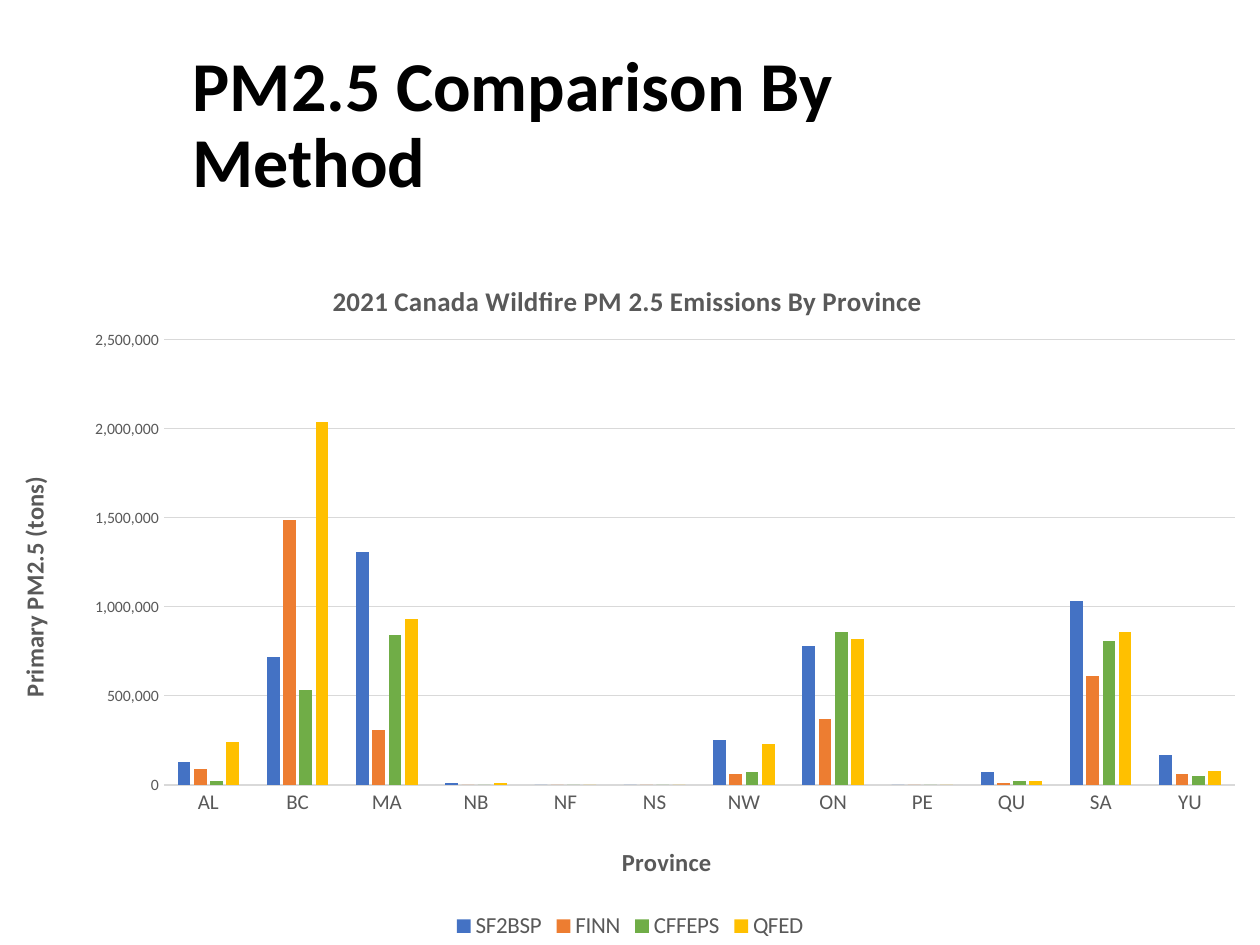
from lxml import etree
from pptx import Presentation
from pptx.chart.data import CategoryChartData
from pptx.dml.color import RGBColor
from pptx.enum import chart as ch, text
from pptx.oxml import ns
from pptx.util import Inches, Pt

FONT = "Calibri"
BLACK, GREY, LIGHT = "000000", "595959", "D9D9D9"
HEADING = "PM2.5 Comparison By Method"
CHART_TITLE = "2021 Canada Wildfire PM 2.5 Emissions By Province"
PROVINCES = ["AL", "BC", "MA", "NB", "NF", "NS", "NW", "ON", "PE", "QU", "SA", "YU"]
# Method, colour, thousands of tons per province
METHODS = [
    ("SF2BSP", "4472C4", [130, 720, 1310, 10, 0, 0, 250, 780, 0, 70, 1030, 170]),
    ("FINN", "ED7D31", [90, 1490, 310, 0, 0, 0, 60, 370, 0, 10, 610, 60]),
    ("CFFEPS", "70AD47", [20, 530, 840, 0, 0, 0, 70, 860, 0, 20, 810, 50]),
    ("QFED", "FFC000", [240, 2040, 930, 10, 0, 0, 230, 820, 0, 20, 860, 80]),
]


def rgb(value):
    return RGBColor.from_string(value)


def style(font, size, color=GREY, bold=False):
    font.name, font.size, font.bold = FONT, Pt(size), bold
    font.color.rgb = rgb(color)


def write(frame, words, **look):
    frame.text = words
    style(frame.paragraphs[0].runs[0].font, **look)


def place(element, index, **fractions):
    """Give a chart part a manual layout in fractions of the chart."""
    for old in element.findall(ns.qn("c:layout")):
        element.remove(old)
    layout = etree.Element(ns.qn("c:layout"))
    manual = etree.SubElement(layout, ns.qn("c:manualLayout"))
    if "w" in fractions:
        etree.SubElement(manual, ns.qn("c:layoutTarget")).set("val", "inner")
    for side in ("x", "y"):
        etree.SubElement(manual, ns.qn(f"c:{side}Mode")).set("val", "edge")
    for key, value in fractions.items():
        etree.SubElement(manual, ns.qn(f"c:{key}")).set("val", str(value))
    element.insert(index, layout)


def style_axis(axis, words, size, x, y):
    write(axis.axis_title.text_frame, words, size=14, bold=True)
    place(axis.axis_title._element, 1, x=x, y=y)
    style(axis.tick_labels.font, size)
    axis.major_tick_mark = axis.minor_tick_mark = ch.XL_TICK_MARK.NONE


def hairline(line):
    line.color.rgb, line.width = rgb(LIGHT), Pt(0.75)


def add_emissions_chart(slide):
    data = CategoryChartData(number_format="#,##0")
    data.categories = PROVINCES
    for method, _, thousands in METHODS:
        data.add_series(method, [1000 * value for value in thousands])
    chart = slide.shapes.add_chart(
        ch.XL_CHART_TYPE.COLUMN_CLUSTERED,
        Inches(0), Inches(1.98), Inches(10), Inches(5.52), data).chart
    style(chart.font, 10, BLACK)

    write(chart.chart_title.text_frame, CHART_TITLE, size=15.4, bold=True)
    chart.chart_title.include_in_layout = False
    place(chart.chart_title._element, 1, x=0.26, y=0.04)

    plot = chart.plots[0]
    plot.gap_width, plot.overlap, plot.vary_by_categories = 219, -27, False
    for series, (_, color, _) in zip(plot.series, METHODS):
        series.format.fill.solid()
        series.format.fill.fore_color.rgb = rgb(color)
    place(chart._chartSpace.chart.plotArea, 0, x=0.13, y=0.13, w=0.85, h=0.64)

    style_axis(chart.category_axis, "Province", 12, x=0.49, y=0.85)
    hairline(chart.category_axis.format.line)
    tons = chart.value_axis
    style_axis(tons, "Primary PM2.5 (tons)", 9, x=0.01, y=0.32)
    tons.minimum_scale, tons.maximum_scale, tons.major_unit = 0, 2500000, 500000
    tons.tick_labels.number_format = "#,##0"
    tons.tick_labels.number_format_is_linked = False
    tons.format.line.fill.background()
    hairline(tons.major_gridlines.format.line)

    chart.has_legend = True
    chart.legend.position = ch.XL_LEGEND_POSITION.BOTTOM
    chart.legend.include_in_layout = False
    style(chart.legend.font, 13.1)


def main():
    deck = Presentation()
    deck.slide_width, deck.slide_height = Inches(10), Inches(7.5)
    slide = deck.slides.add_slide(deck.slide_layouts[5])
    title = slide.shapes.title
    title.left, title.top = Inches(1.43), Inches(0.28)
    title.width, title.height = Inches(7.14), Inches(1.45)
    frame = title.text_frame
    write(frame, HEADING, size=40, color=BLACK, bold=True)
    frame.word_wrap, frame.auto_size = True, text.MSO_AUTO_SIZE.NONE
    frame.vertical_anchor = text.MSO_ANCHOR.MIDDLE
    frame.paragraphs[0].alignment = text.PP_ALIGN.LEFT
    frame.paragraphs[0].line_spacing = 0.9
    add_emissions_chart(slide)
    deck.save("out.pptx")


if __name__ == "__main__":
    main()
